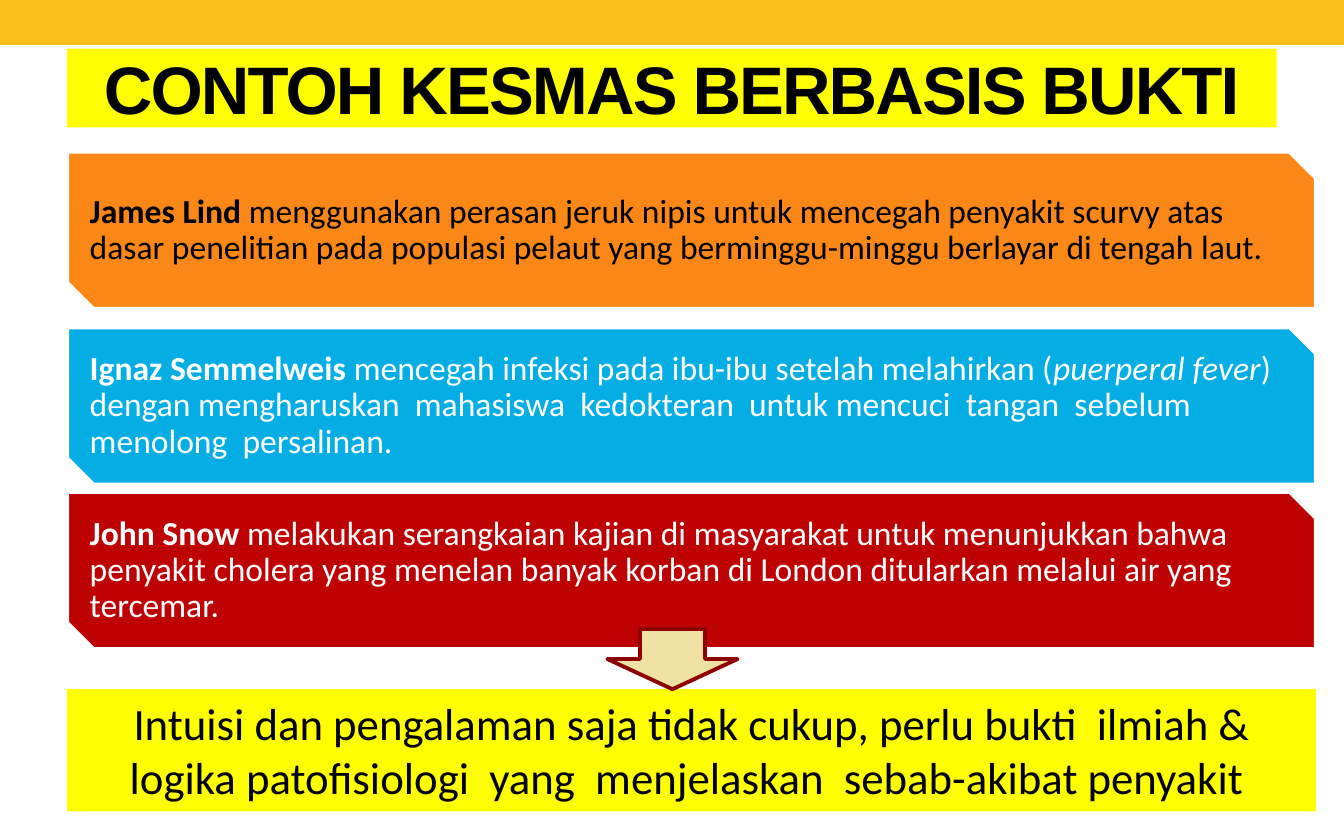
from pptx import Presentation
from pptx.dml.color import RGBColor
from pptx.enum import shapes, text
from pptx.util import Cm, Pt

BLACK = RGBColor(0x00, 0x00, 0x00)
WHITE = RGBColor(0xFF, 0xFF, 0xFF)
YELLOW = RGBColor(0xFF, 0xFF, 0x00)
GOLD = RGBColor(0xFB, 0xC0, 0x1E)
ORANGE = RGBColor(0xFA, 0x87, 0x16)
BLUE = RGBColor(0x04, 0xAE, 0xE4)
RED = RGBColor(0xBE, 0x02, 0x04)
CREAM = RGBColor(0xEF, 0xE1, 0xA2)
MAROON = RGBColor(0x8E, 0x01, 0x03)

TITLE = "CONTOH KESMAS BERBASIS BUKTI"
CONCLUSION = ("Intuisi dan pengalaman saja tidak cukup, perlu bukti  ilmiah & "
              "logika patofisiologi  yang  menjelaskan  sebab-akibat penyakit ")
EXAMPLES = [
    (2.87, ORANGE, BLACK, [
        ("James Lind ", "b"),
        ("menggunakan perasan jeruk nipis untuk mencegah penyakit scurvy atas "
         "dasar penelitian pada populasi pelaut yang berminggu-minggu berlayar "
         "di tengah laut.", ""),
    ]),
    (6.19, BLUE, WHITE, [
        ("Ignaz Semmelweis ", "b"),
        ("mencegah infeksi pada ibu-ibu setelah melahirkan (", ""),
        ("puerperal fever", "i"),
        (") dengan mengharuskan  mahasiswa  kedokteran  untuk mencuci  tangan  "
         "sebelum  menolong  persalinan.", ""),
    ]),
    (9.3, RED, WHITE, [
        ("John Snow ", "b"),
        ("melakukan serangkaian kajian di masyarakat untuk menunjukkan bahwa "
         "penyakit cholera yang menelan banyak korban di London ditularkan "
         "melalui air yang tercemar.", ""),
    ]),
]
LEFT, CARD_W, CARD_H = 1.27, 23.6, 2.97
SHAPE = shapes.MSO_SHAPE
ALIGN = text.PP_ALIGN
ANCHOR = text.MSO_ANCHOR


def add_box(s, kind, box, fill, line=None):
    sp = s.shapes.add_shape(kind, *(Cm(v) for v in box))
    sp.shadow.inherit = False
    sp.fill.solid()
    sp.fill.fore_color.rgb = fill
    if line is None:
        sp.line.fill.background()
    else:
        sp.line.color.rgb = line
        sp.line.width = Pt(2.08)
    return sp


def write(sp, runs, font, size, color, align, anchor):
    tf = sp.text_frame
    tf.word_wrap = True
    tf.vertical_anchor = anchor
    p = tf.paragraphs[0]
    p.alignment = align
    for words, style in runs:
        r = p.add_run()
        r.text = words
        r.font.name = font
        r.font.size = Pt(size)
        r.font.color.rgb = color
        r.font.bold = style == "b"
        r.font.italic = style == "i"
    return tf


def main():
    prs = Presentation()
    prs.slide_width, prs.slide_height = Cm(25.4), Cm(15.88)
    s = prs.slides.add_slide(prs.slide_layouts[6])

    add_box(s, SHAPE.RECTANGLE, (0, 0, 25.4, 0.85), GOLD)

    title = add_box(s, SHAPE.RECTANGLE, (LEFT, 0.92, 22.86, 1.49), YELLOW)
    tf = write(title, [(TITLE, "b")], "Arial", 36, BLACK, ALIGN.CENTER, ANCHOR.MIDDLE)
    tf.paragraphs[0].runs[0].font._element.set("spc", "-100")

    conclusion = add_box(s, SHAPE.RECTANGLE, (LEFT, 13.03, CARD_W, 2.31), YELLOW)
    write(conclusion, [(CONCLUSION, "")], "Calibri", 24, BLACK, ALIGN.CENTER, ANCHOR.TOP)

    for top, fill, color, runs in EXAMPLES:
        card = add_box(s, SHAPE.SNIP_2_DIAG_RECTANGLE, (LEFT, top, CARD_W, CARD_H), fill, WHITE)
        tf = write(card, runs, "Calibri", 18, color, ALIGN.LEFT, ANCHOR.MIDDLE)
        tf.margin_left = tf.margin_right = tf.margin_top = tf.margin_bottom = Cm(0.18)
        tf.paragraphs[0].line_spacing = 0.9

    add_box(s, SHAPE.DOWN_ARROW, (11.48, 11.89, 2.46, 1.14), CREAM, MAROON)

    prs.save("out.pptx")


if __name__ == "__main__":
    main()
